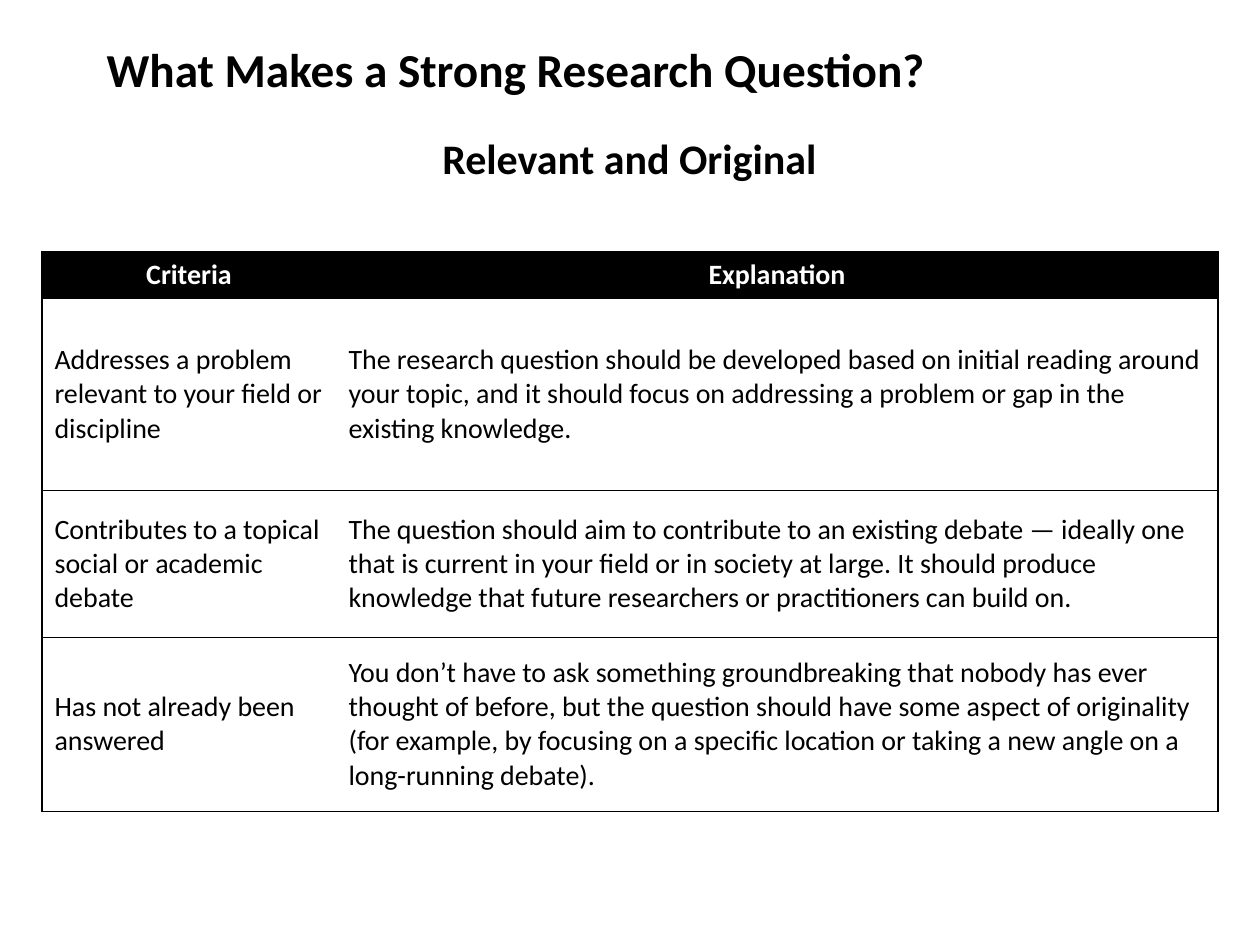
from lxml import etree
from pptx import Presentation
from pptx.dml.color import RGBColor
from pptx.enum.text import MSO_ANCHOR, MSO_AUTO_SIZE, PP_ALIGN
from pptx.oxml.ns import qn
from pptx.util import Emu, Pt

EMU_PER_PX = 914400 / 126
TITLE_ONLY = 5
FONT = "Calibri"
COLORS = {"ink": "000000", "paper": "FFFFFF"}
MIDDLE, TOP = MSO_ANCHOR.MIDDLE, MSO_ANCHOR.TOP
LEFT, CENTER = PP_ALIGN.LEFT, PP_ALIGN.CENTER
NO_AUTOFIT = MSO_AUTO_SIZE.NONE
BORDER_WIDTH = Pt(0.75)

COLUMN_WIDTHS = [294, 882]
ROW_HEIGHTS = [46, 192, 147, 174]
ROWS = [
    ("Criteria", "Explanation"),
    ("Addresses a problem relevant to your field or discipline",
     "The research question should be developed based on initial reading around "
     "your topic, and it should focus on addressing a problem or gap in the "
     "existing knowledge."),
    ("Contributes to a topical social or academic debate",
     "The question should aim to contribute to an existing debate — ideally one "
     "that is current in your field or in society at large. It should produce "
     "knowledge that future researchers or practitioners can build on."),
    ("Has not already been answered",
     "You don’t have to ask something groundbreaking that nobody has ever "
     "thought of before, but the question should have some aspect of originality "
     "(for example, by focusing on a specific location or taking a new angle on a "
     "long-running debate)."),
]


def px(length):
    return Emu(round(length * EMU_PER_PX))


def color(name):
    return RGBColor.from_string(COLORS[name])


def set_text(text_frame, text, size, color_name, bold, alignment):
    text_frame.text = text
    paragraph = text_frame.paragraphs[0]
    paragraph.alignment = alignment
    paragraph.font.name = FONT
    paragraph.font.size = Pt(size)
    paragraph.font.bold = bold
    paragraph.font.color.rgb = color(color_name)


def add_title(slide, left, top, width, height):
    title = slide.shapes.title
    title.left, title.top = px(left), px(top)
    title.width, title.height = px(width), px(height)
    frame = title.text_frame
    frame.auto_size = NO_AUTOFIT
    frame.vertical_anchor = TOP
    set_text(frame, "What Makes a Strong Research Question?", 27, "ink", True, LEFT)


def add_subtitle(slide, left, top, width, height):
    box = slide.shapes.add_textbox(px(left), px(top), px(width), px(height))
    box.text_frame.word_wrap = False
    set_text(box.text_frame, "Relevant and Original", 24, "ink", True, CENTER)


def set_borders(cell, visible_sides):
    properties = cell._tc.get_or_add_tcPr()
    for side in "LRTB":
        line = etree.SubElement(properties, qn(f"a:ln{side}"), w=str(BORDER_WIDTH))
        if side in visible_sides:
            fill = etree.SubElement(line, qn("a:solidFill"))
            etree.SubElement(fill, qn("a:srgbClr"), val=COLORS["ink"])
        else:
            etree.SubElement(line, qn("a:noFill"))


def add_criteria_table(slide, left, top):
    table = slide.shapes.add_table(
        len(ROWS), len(COLUMN_WIDTHS), px(left), px(top),
        px(sum(COLUMN_WIDTHS)), px(sum(ROW_HEIGHTS))).table
    for column, width in zip(table.columns, COLUMN_WIDTHS):
        column.width = px(width)
    for row, height in zip(table.rows, ROW_HEIGHTS):
        row.height = px(height)

    for row_index, texts in enumerate(ROWS):
        is_header = row_index == 0
        for column_index, text in enumerate(texts):
            cell = table.cell(row_index, column_index)
            cell.vertical_anchor = MIDDLE
            set_text(cell.text_frame, text, 16, "paper" if is_header else "ink",
                     is_header, CENTER if is_header else LEFT)
            # Rules run between rows and around the table, not between columns
            set_borders(cell, "TBL" if column_index == 0 else "TBR")
            cell.fill.solid()
            cell.fill.fore_color.rgb = color("ink" if is_header else "paper")


def main():
    presentation = Presentation()
    presentation.slide_width, presentation.slide_height = px(1260), px(945)
    slide = presentation.slides.add_slide(presentation.slide_layouts[TITLE_ONLY])

    # Headings
    add_title(slide, 94, 34, 914, 71)
    add_subtitle(slide, 428, 126, 403, 63)

    # Criteria and their explanations
    add_criteria_table(slide, 42, 252)

    presentation.save("out.pptx")


if __name__ == "__main__":
    main()
